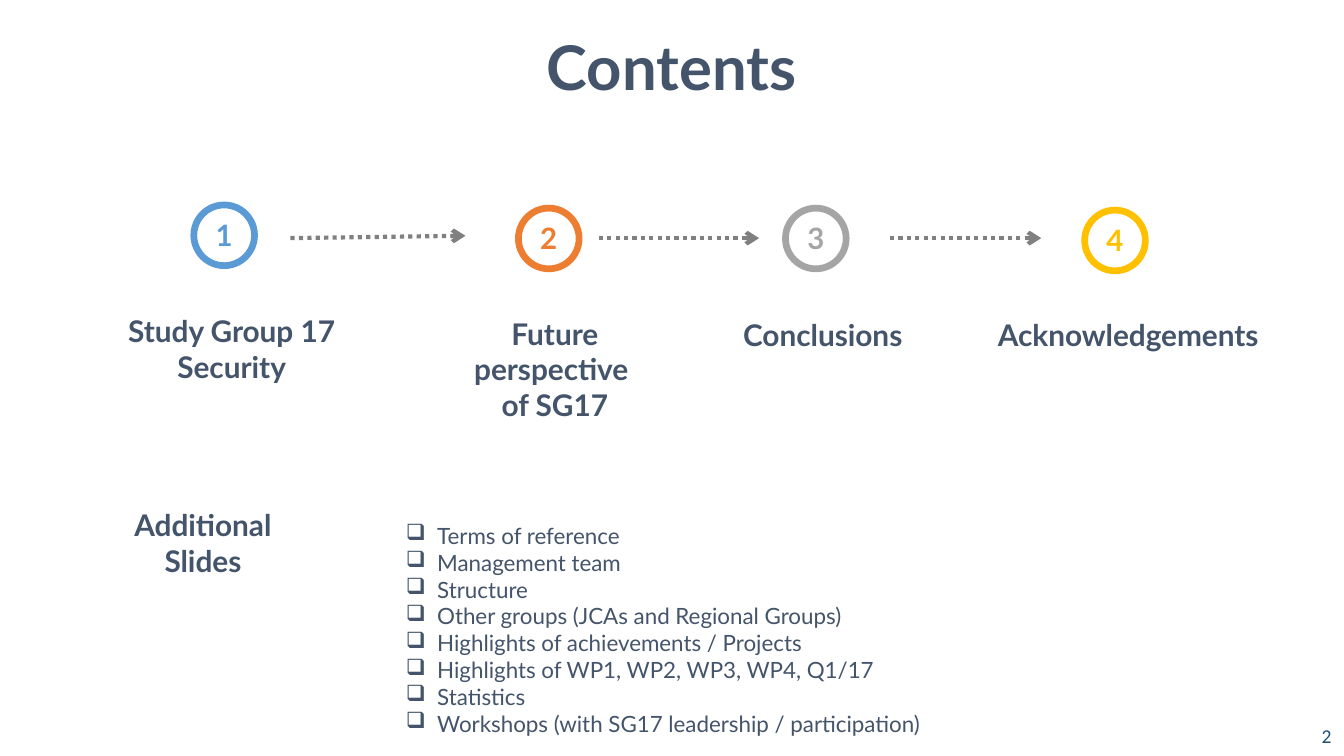
from lxml import etree
from pptx import Presentation
from pptx import util as u
from pptx.dml.color import RGBColor
from pptx.enum import dml, shapes, text
from pptx.oxml import ns

SLATE = RGBColor(0x44, 0x54, 0x6A)
BLUE = RGBColor(0x5B, 0x9B, 0xD5)
ORANGE = RGBColor(0xED, 0x7D, 0x31)
GRAY = RGBColor(0xA5, 0xA5, 0xA5)
GOLD = RGBColor(0xFF, 0xC0, 0x00)
ARROW_GRAY = RGBColor(0x80, 0x80, 0x80)
NAVY = RGBColor(0x1F, 0x4E, 0x79)

HEADING = "Contents"
STEPS = [
    ("Study Group 17 Security", BLUE, (4.8, 5.08), (2.59, 7.75, 6.5, 2.08)),
    ("Future perspective \nof SG17", ORANGE, (12.98, 5.16), (10.85, 7.82, 6.27, 3.89)),
    ("Conclusions", GRAY, (19.71, 5.16), (18.08, 7.85, 5.31, 1.17)),
    ("Acknowledgements", GOLD, (27.25, 5.21), (24.64, 7.85, 7.59, 1.17)),
]
ARROWS = [(7.32, 6.0, 11.73, 5.94), (15.09, 6.0, 19.13, 6.0), (22.43, 6.0, 26.24, 6.0)]
EXTRAS_LABEL = "Additional Slides"
EXTRAS = [
    "Terms of reference",
    "Management team",
    "Structure",
    "Other groups (JCAs and Regional Groups)",
    "Highlights of achievements / Projects",
    "Highlights of WP1, WP2, WP3, WP4, Q1/17",
    "Statistics",
    "Workshops (with SG17 leadership / participation)",
]
PAGE_NUMBER = "2"

RING_SIZE, RING_BAND = 1.7, 0.1
NUMBER_WIDTH, NUMBER_HEIGHT, NUMBER_DROP = 1.45, 1.14, 0.27
CENTER, LEFT, RIGHT = text.PP_ALIGN.CENTER, text.PP_ALIGN.LEFT, text.PP_ALIGN.RIGHT
HEADING_FONT = {"name": "Lato", "size": u.Pt(44), "bold": True}
LABEL_FONT = {"name": "Lato", "size": u.Pt(21.3), "bold": True}
NUMBER_FONT = {"name": "Lato", "size": u.Pt(21), "bold": True}
EXTRAS_FONT = {"name": "Lato", "size": u.Pt(16), "bold": False}
PAGE_FONT = {"name": "Calibri", "size": u.Pt(14), "bold": False}


def write(frame, lines, font, color, align):
    """Fill a text frame with one formatted paragraph per line."""
    frame.word_wrap = True
    frame.auto_size = text.MSO_AUTO_SIZE.NONE
    for index, line in enumerate(lines):
        paragraph = frame.paragraphs[0] if index == 0 else frame.add_paragraph()
        paragraph.text = line
        paragraph.alignment = align
        for run in paragraph.runs:
            for key, value in font.items():
                setattr(run.font, key, value)
            run.font.color.rgb = color


def add_text(slide, box, lines, font, color, align=CENTER):
    """Add a text box at a place given in centimetres."""
    frame = slide.shapes.add_textbox(*map(u.Cm, box)).text_frame
    write(frame, lines, font, color, align)
    return frame


def add_step(slide, number, step):
    """Add a ring with its number and the label below."""
    label, color, (left, top), label_box = step
    ring = slide.shapes.add_shape(
        shapes.MSO_SHAPE.DONUT, *map(u.Cm, (left, top, RING_SIZE, RING_SIZE)))
    ring.adjustments[0] = RING_BAND
    ring.shadow.inherit = False
    ring.fill.solid()
    ring.fill.fore_color.rgb = color
    ring.line.fill.background()
    number_left = left + (RING_SIZE - NUMBER_WIDTH) / 2
    number_box = (number_left, top + NUMBER_DROP, NUMBER_WIDTH, NUMBER_HEIGHT)
    add_text(slide, number_box, [str(number)], NUMBER_FONT, color)
    add_text(slide, label_box, [label], LABEL_FONT, SLATE)


def add_arrow(slide, ends):
    """Add a dotted arrow between two steps."""
    arrow = slide.shapes.add_connector(shapes.MSO_CONNECTOR.STRAIGHT, *map(u.Cm, ends))
    arrow.line.color.rgb = ARROW_GRAY
    arrow.line.width = u.Pt(3)
    arrow.line.dash_style = dml.MSO_LINE.ROUND_DOT
    properties = arrow.line._get_or_add_ln()
    etree.SubElement(properties, ns.qn("a:tailEnd"), type="arrow")
    etree.SubElement(properties.getparent(), ns.qn("a:effectLst"))


def add_bullets(frame):
    """Give each paragraph a box bullet with a hanging indent."""
    for paragraph in frame.paragraphs:
        paragraph.level = 1
        properties = paragraph._p.get_or_add_pPr()
        properties.set("marL", str(u.Cm(2.06)))
        properties.set("indent", str(u.Cm(-0.79)))
        etree.SubElement(properties, ns.qn("a:buChar"), char="❑")


def main():
    """Build the contents slide."""
    deck = Presentation()
    deck.slide_width, deck.slide_height = u.Cm(33.87), u.Cm(19.05)
    slide = deck.slides.add_slide(deck.slide_layouts[5])

    title = slide.shapes.title
    title.left, title.top, title.width, title.height = map(u.Cm, (2.39, 0.66, 29.08, 2.01))
    margins = {"margin_left": 0.13, "margin_right": 0.13, "margin_top": 0.05, "margin_bottom": 0.05}
    for key, value in margins.items():
        setattr(title.text_frame, key, u.Cm(value))
    write(title.text_frame, [HEADING], HEADING_FONT, SLATE, CENTER)

    for number, step in enumerate(STEPS, 1):
        add_step(slide, number, step)
    for ends in ARROWS:
        add_arrow(slide, ends)

    add_text(slide, (2.46, 12.65, 5.31, 2.08), [EXTRAS_LABEL], LABEL_FONT, SLATE)
    extras = add_text(slide, (8.71, 13.03, 18.54, 5.74), EXTRAS, EXTRAS_FONT, SLATE, LEFT)
    add_bullets(extras)
    page = add_text(slide, (26.19, 18.03, 7.62, 1.02), [PAGE_NUMBER], PAGE_FONT, NAVY, RIGHT)
    page.vertical_anchor = text.MSO_ANCHOR.MIDDLE

    deck.save("out.pptx")


if __name__ == "__main__":
    main()
